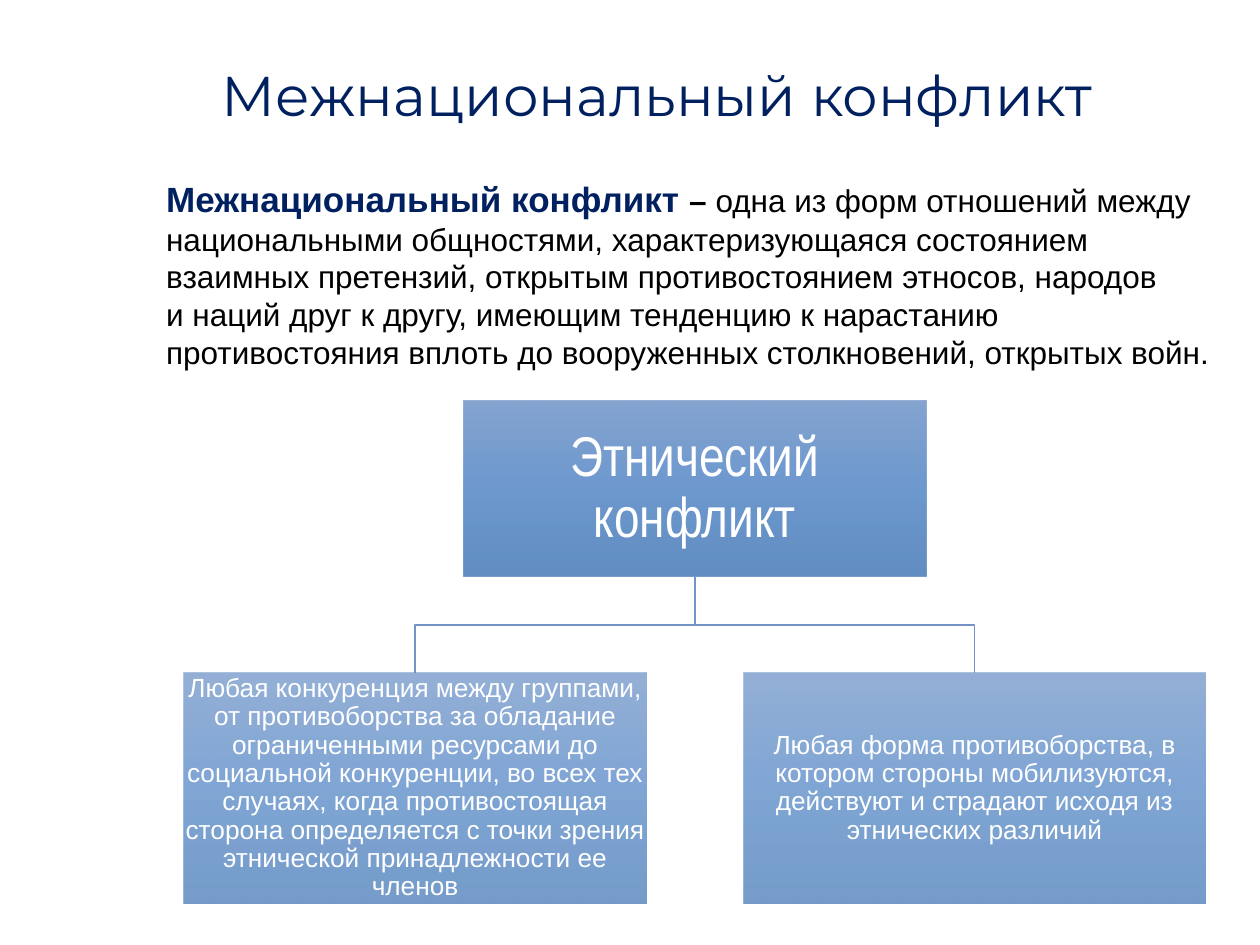
import dataclasses

import lxml.etree
import pptx
import pptx.dml.color
import pptx.enum.text
import pptx.oxml.ns
import pptx.util
from pptx.util import Inches


@dataclasses.dataclass(frozen=True)
class Theme:
    navy: str = "002060"
    black: str = "000000"
    white: str = "FFFFFF"
    branch: str = "7394C5"
    gradient: tuple = ((0, "688FC5"), (50, "4A80C3"), (100, "3B72B3"))
    heading_font: str = "Montserrat"
    body_font: str = "Arial"
    root_font: str = "Arial Narrow"
    heading_size: int = 32
    term_size: int = 20
    body_size: int = 18
    leaf_size: int = 15


THEME = Theme()
CENTER = pptx.enum.text.PP_ALIGN.CENTER
BOX_WIDTH = 3.67
ROOT_LEFT, ROOT_TOP, ROOT_HEIGHT = 3.68, 3.18, 1.4
LEAF_OFFSET, LEAF_TOP, LEAF_HEIGHT = 2.22, 5.34, 1.83


def rgb(color):
    return pptx.dml.color.RGBColor.from_string(color)


def style(run, font, size, color, bold=False):
    run.font.name = font
    run.font.size = pptx.util.Pt(size)
    run.font.color.rgb = rgb(color)
    run.font.bold = bold


def add_text(slide, left, top, width, height):
    frame = slide.shapes.add_textbox(
        Inches(left), Inches(top), Inches(width), Inches(height)
    ).text_frame
    frame.word_wrap = True
    return frame


def add_heading(slide):
    frame = add_text(slide, 0.98, 0.43, 8.59, 0.64)
    frame.text = "Межнациональный конфликт "
    heading = frame.paragraphs[0]
    heading.alignment = CENTER
    style(heading.runs[0], THEME.heading_font, THEME.heading_size, THEME.navy)


def add_definition(slide):
    definition = add_text(slide, 1.22, 1.36, 8.58, 1.65).paragraphs[0]
    definition.text = "Межнациональный конфликт "
    style(definition.runs[0], THEME.body_font, THEME.term_size, THEME.navy, True)
    for wording, bold in (
        ("– ", True),
        ("одна из форм отношений между национальными общностями, "
         "характеризующаяся состоянием взаимных претензий, открытым "
         "противостоянием этносов, народов", False),
        ("и наций друг к другу, имеющим тенденцию к нарастанию противостояния "
         "вплоть до вооруженных столкновений, открытых войн.", False),
    ):
        if wording.startswith("и наций"):
            definition.add_line_break()
        run = definition.add_run()
        run.text = wording
        style(run, THEME.body_font, THEME.body_size, THEME.black, bold)


def fill_gradient(box, opacity):
    qn = pptx.oxml.ns.qn
    box.fill.gradient()
    box.fill.gradient_angle = 270
    stops = box.element.spPr.find(".//" + qn("a:gsLst"))
    for stop in list(stops):
        stops.remove(stop)
    for position, color in THEME.gradient:
        stop = lxml.etree.SubElement(stops, qn("a:gs"), pos=str(position * 1000))
        tint = lxml.etree.SubElement(stop, qn("a:srgbClr"), val=color)
        lxml.etree.SubElement(tint, qn("a:alpha"), val=str(opacity * 1000))


def add_box(slide, left, top, height, wording, font, size, opacity, inset):
    box = slide.shapes.add_shape(
        pptx.enum.shapes.MSO_SHAPE.RECTANGLE,
        Inches(left), Inches(top), Inches(BOX_WIDTH), Inches(height),
    )
    box.shadow.inherit = False
    box.line.fill.background()
    fill_gradient(box, opacity)
    frame = box.text_frame
    frame.word_wrap = True
    frame.vertical_anchor = pptx.enum.text.MSO_ANCHOR.MIDDLE
    frame.margin_left = frame.margin_right = Inches(inset)
    frame.margin_top = frame.margin_bottom = Inches(inset)
    frame.text = wording
    paragraph = frame.paragraphs[0]
    paragraph.alignment = CENTER
    paragraph.line_spacing = 0.9
    style(paragraph.runs[0], font, size, THEME.white)


def add_branch(slide, root_x, leaf_x):
    start, end = ROOT_TOP + ROOT_HEIGHT, LEAF_TOP
    middle = (start + end) / 2
    builder = slide.shapes.build_freeform(Inches(root_x), Inches(start))
    builder.add_line_segments(
        [(Inches(x), Inches(y))
         for x, y in ((root_x, middle), (leaf_x, middle), (leaf_x, end))],
        close=False,
    )
    branch = builder.convert_to_shape()
    branch.shadow.inherit = False
    branch.fill.background()
    branch.line.color.rgb = rgb(THEME.branch)
    branch.line.width = pptx.util.Pt(1)


def add_conflict_tree(slide):
    root_x = ROOT_LEFT + BOX_WIDTH / 2
    leaves = (
        (-LEAF_OFFSET,
         "Любая конкуренция между группами, от противоборства за обладание "
         "ограниченными ресурсами до социальной конкуренции, во всех тех случаях, "
         "когда противостоящая сторона определяется с точки зрения этнической "
         "принадлежности ее членов"),
        (LEAF_OFFSET,
         "Любая форма противоборства, в котором стороны мобилизуются, действуют "
         "и страдают исходя из этнических различий"),
    )
    for offset, _ in reversed(leaves):
        add_branch(slide, root_x, root_x + offset)
    add_box(slide, ROOT_LEFT, ROOT_TOP, ROOT_HEIGHT, "Этнический конфликт",
            THEME.root_font, THEME.heading_size, 80, 0.02)
    for offset, wording in leaves:
        add_box(slide, ROOT_LEFT + offset, LEAF_TOP, LEAF_HEIGHT, wording,
                THEME.body_font, THEME.leaf_size, 70, 0.01)


def main():
    presentation = pptx.Presentation()
    presentation.slide_width = Inches(10)
    presentation.slide_height = Inches(7.5)
    slide = presentation.slides.add_slide(presentation.slide_layouts[6])
    add_definition(slide)
    add_heading(slide)
    add_conflict_tree(slide)
    presentation.save("out.pptx")


if __name__ == "__main__":
    main()
